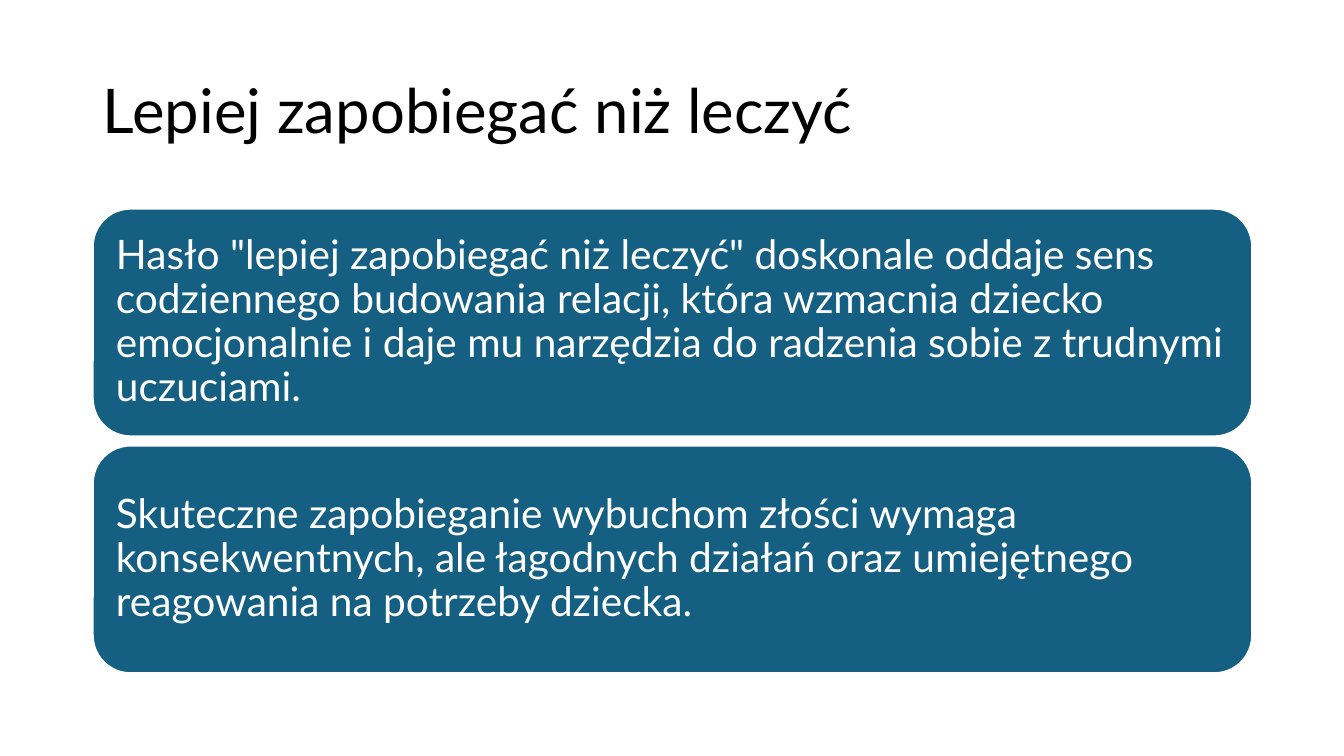
import pptx
import pptx.dml.color
import pptx.enum.shapes
import pptx.enum.text
import pptx.util

Inches = pptx.util.Inches
MIDDLE = pptx.enum.text.MSO_ANCHOR.MIDDLE
LEFT = pptx.enum.text.PP_ALIGN.LEFT


def color(value):
    return pptx.dml.color.RGBColor.from_string(value)


def write(shape, text, size, text_color, frame_format):
    frame = shape.text_frame
    for name, value in frame_format.items():
        setattr(frame, name, value)
    para = frame.paragraphs[0]
    para.alignment = LEFT
    para.line_spacing = 0.9
    span = para.add_run()
    span.text = text
    for name, value in {"name": "Lato", "size": pptx.util.Pt(size)}.items():
        setattr(span.font, name, value)
    span.font.color.rgb = color(text_color)


# Deck and page
deck = pptx.Presentation()
deck.slide_width = Inches(13.33)
deck.slide_height = Inches(7.5)
page = deck.slides.add_slide(deck.slide_layouts[5])

# Title
title = page.shapes.title
title_place = {"left": 0.92, "top": 0.4, "width": 11.5, "height": 1.45}
for name, value in title_place.items():
    setattr(title, name, Inches(value))
write(title, "Lepiej zapobiegać niż leczyć", 44, "000000",
      {"word_wrap": True, "vertical_anchor": MIDDLE})

# Message cards, stacked at an equal step
messages = [
    'Hasło "lepiej zapobiegać niż leczyć" doskonale oddaje sens codziennego '
    "budowania relacji, która wzmacnia dziecko emocjonalnie i daje mu "
    "narzędzia do radzenia sobie z trudnymi uczuciami.",
    "Skuteczne zapobieganie wybuchom złości wymaga konsekwentnych, ale "
    "łagodnych działań oraz umiejętnego reagowania na potrzeby dziecka.",
]
card_format = {"word_wrap": True, "vertical_anchor": MIDDLE}
for side in ("left", "top", "right", "bottom"):
    card_format["margin_" + side] = Inches(0.12)

for index, message in enumerate(messages):
    card = page.shapes.add_shape(
        pptx.enum.shapes.MSO_SHAPE.ROUNDED_RECTANGLE,
        Inches(0.92), Inches(2.07 + 2.35 * index), Inches(11.5), Inches(2.26))
    card.shadow.inherit = False
    card.fill.solid()
    card.fill.fore_color.rgb = color("156082")
    card.line.color.rgb = color("FFFFFF")
    card.line.width = pptx.util.Pt(1.5)
    write(card, message, 29, "FFFFFF", card_format)

deck.save("out.pptx")
